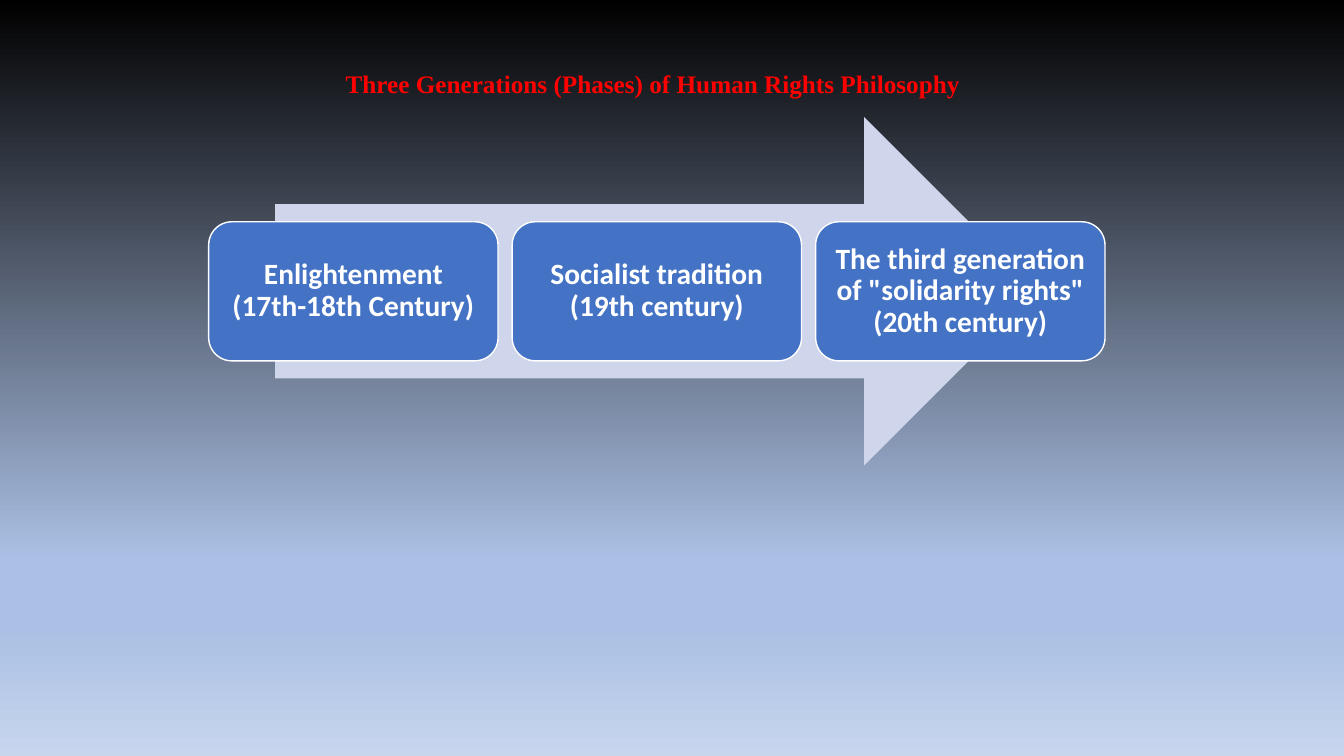
import pptx
import pptx.dml.color
import pptx.enum.shapes
import pptx.enum.text
import pptx.oxml.ns
import pptx.oxml.xmlchemy
import pptx.util
from lxml import etree

Inches = pptx.util.Inches
Pt = pptx.util.Pt
SHAPES = pptx.enum.shapes.MSO_SHAPE
qn = pptx.oxml.ns.qn

COLOURS = {
    "title": "FF0000",
    "arrow": "CFD5EA",
    "phase": "4472C4",
    "white": "FFFFFF",
}
BACKGROUND_STOPS = [(0, "000000"), (74, "ABC0E4"), (83, "ABC0E4"), (100, "C7D5ED")]

PHASES = [
    "Enlightenment (17th-18th Century)",
    "Socialist tradition (19th century)",
    'The third generation of "solidarity rights" (20th century)',
]
PHASE_LEFT, PHASE_TOP = 2.07, 2.2
PHASE_WIDTH, PHASE_HEIGHT = 2.87, 1.38
PHASE_GAP = 0.14


class SlideBuilder:
    def __init__(self, slide):
        self.slide = slide

    def colour(self, name):
        return pptx.dml.color.RGBColor.from_string(COLOURS[name])

    def style_font(self, paragraph, family, size, colour):
        paragraph.font.name = family
        paragraph.font.size = Pt(size)
        paragraph.font.bold = True
        paragraph.font.color.rgb = self.colour(colour)

    def background(self, stops):
        """Fill the background from top to bottom with (percent, hex) stops."""
        fill = self.slide.background.fill
        fill.gradient()
        fill.gradient_angle = 270
        stop_list = self.slide.element.find(".//" + qn("a:gsLst"))
        for old_stop in list(stop_list):
            stop_list.remove(old_stop)
        for percent, value in stops:
            stop = etree.SubElement(stop_list, qn("a:gs"), pos=str(percent * 1000))
            etree.SubElement(stop, qn("a:srgbClr"), val=value)

    def title(self, text, left, top, width, height):
        box = self.slide.shapes.add_textbox(
            Inches(left), Inches(top), Inches(width), Inches(height))
        box.text_frame.word_wrap = True
        paragraph = box.text_frame.paragraphs[0]
        paragraph.text = text
        self.style_font(paragraph, "Times New Roman", 18, "title")

    def shape(self, preset, left, top, width, height, fill):
        shape = self.slide.shapes.add_shape(
            preset, Inches(left), Inches(top), Inches(width), Inches(height))
        shape.shadow.inherit = False
        shape.fill.solid()
        shape.fill.fore_color.rgb = self.colour(fill)
        shape.line.fill.background()
        return shape

    def phase(self, text, left, top, width, height):
        card = self.shape(SHAPES.ROUNDED_RECTANGLE, left, top, width, height, "phase")
        card.line.color.rgb = self.colour("white")
        card.line.width = Pt(1)
        frame = card.text_frame
        frame.word_wrap = True
        frame.vertical_anchor = pptx.enum.text.MSO_ANCHOR.MIDDLE
        frame.margin_left = frame.margin_right = Inches(0.09)
        frame.margin_top = frame.margin_bottom = Inches(0.09)
        paragraph = frame.paragraphs[0]
        paragraph.text = text
        paragraph.alignment = pptx.enum.text.PP_ALIGN.CENTER
        paragraph.line_spacing = 0.9
        self.style_font(paragraph, "Calibri", 21, "white")


def main():
    presentation = pptx.Presentation()
    presentation.slide_width = Inches(13.33)
    presentation.slide_height = Inches(7.5)
    builder = SlideBuilder(presentation.slides.add_slide(presentation.slide_layouts[6]))

    builder.background(BACKGROUND_STOPS)
    builder.title("Three Generations (Phases) of Human Rights Philosophy",
                  3.33, 0.63, 6.67, 1.01)
    builder.shape(SHAPES.RIGHT_ARROW, 2.73, 1.16, 7.57, 3.46, "arrow")
    for index, phase in enumerate(PHASES):
        builder.phase(phase, PHASE_LEFT + index * (PHASE_WIDTH + PHASE_GAP),
                      PHASE_TOP, PHASE_WIDTH, PHASE_HEIGHT)

    presentation.save("out.pptx")


if __name__ == "__main__":
    main()
